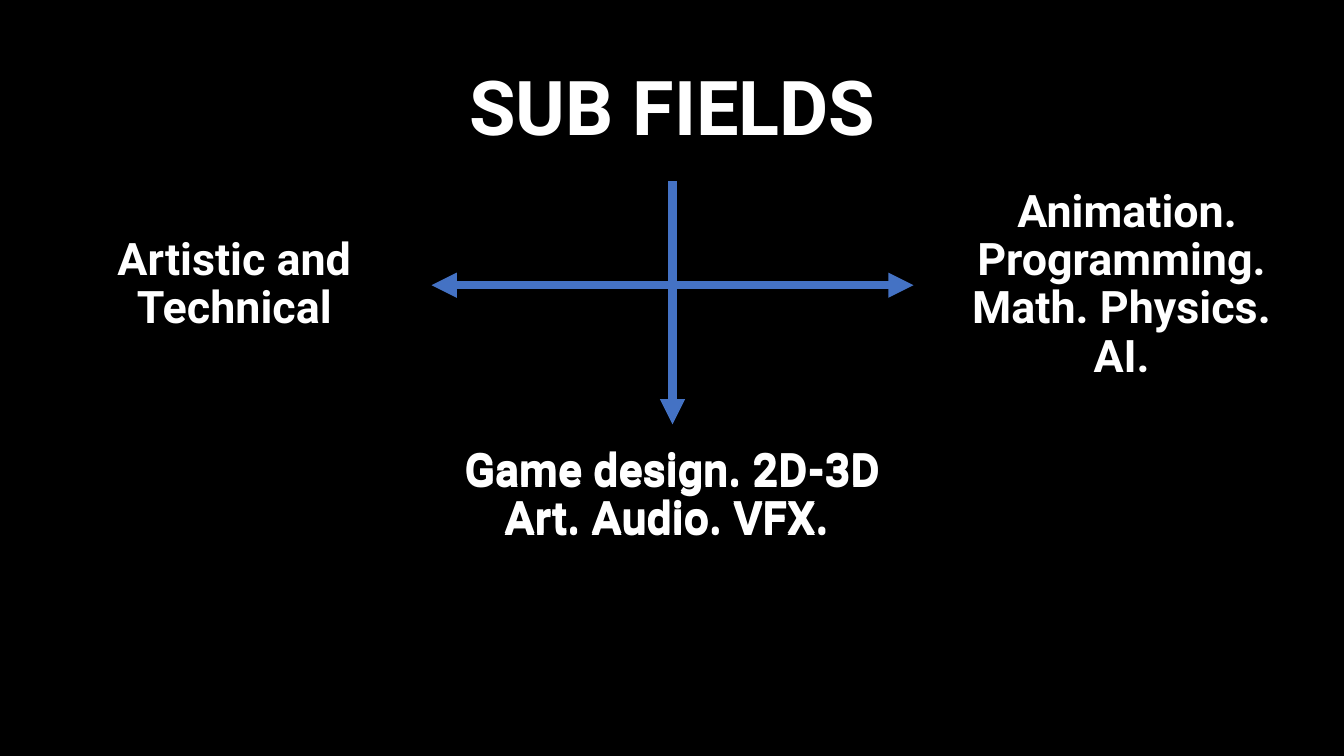
from dataclasses import dataclass
from lxml.etree import SubElement
from pptx import Presentation
from pptx.dml.color import RGBColor
from pptx.enum.shapes import MSO_CONNECTOR
from pptx.enum.text import MSO_ANCHOR, PP_ALIGN
from pptx.oxml.ns import qn
from pptx.util import Inches, Pt


@dataclass(frozen=True)
class Theme:
    back: RGBColor = RGBColor(0, 0, 0)
    ink: RGBColor = RGBColor(255, 255, 255)
    line: RGBColor = RGBColor(0x44, 0x72, 0xC4)
    font: str = "Roboto"
    head: int = 54
    body: int = 32
    width: int = 6


class Board:
    def __init__(self, slide, theme):
        self.slide = slide
        self.theme = theme
        fill = slide.background.fill
        fill.solid()
        fill.fore_color.rgb = theme.back

    def label(self, text, left, top, width, size):
        box = self.slide.shapes.add_textbox(
            Inches(left), Inches(top), Inches(width), Inches(1.4))
        frame = box.text_frame
        frame.word_wrap = True
        frame.vertical_anchor = MSO_ANCHOR.MIDDLE
        frame.text = text
        para = frame.paragraphs[0]
        para.alignment = PP_ALIGN.CENTER
        para.line_spacing = 0.9
        font = para.runs[0].font
        font.name = self.theme.font
        font.size = Pt(size)
        font.bold = True
        font.color.rgb = self.theme.ink
        return box

    def arrow(self, kind, start, end):
        link = self.slide.shapes.add_connector(
            kind, *(Inches(n) for n in (*start, *end)))
        link.line.color.rgb = self.theme.line
        link.line.width = Pt(self.theme.width)
        props = link._element.spPr
        SubElement(props.find(qn("a:ln")), qn("a:tailEnd"), type="triangle")
        SubElement(props, qn("a:effectLst"))
        return link

    def branch(self, start, end):
        (x1, y1), (x2, y2) = start, end
        mid, level = (x1 + x2) / 2, (y1 + y2) / 2
        drop, reach = (y2 - y1) / 2, abs(x2 - x1) / 2
        side = 1 if x2 < x1 else -1
        link = self.arrow(MSO_CONNECTOR.ELBOW,
                          (mid - side * drop, level - reach),
                          (mid + side * drop, level + reach))
        props = link._element.spPr
        props.find(qn("a:prstGeom")).set("prst", "bentConnector2")
        turn = 90 if side > 0 else 270
        props.find(qn("a:xfrm")).set("rot", str(turn * 60000))


def main():
    deck = Presentation()
    deck.slide_width = Inches(13.33)
    deck.slide_height = Inches(7.5)
    theme = Theme()
    board = Board(deck.slides.add_slide(deck.slide_layouts[6]), theme)

    title = board.label("SUB FIELDS", 1.67, 0.4, 10, theme.head)
    root = (6.67, 1.8)
    for side in (-1, 1):
        board.branch(root, (root[0] + side * 2.39, 2.83))
    stem = board.arrow(MSO_CONNECTOR.STRAIGHT, root, (6.67, 4.2))

    design = "Game design. 2D-3D Art. Audio. VFX. "
    labels = (
        ("Artistic and Technical", 0.37, 2.13, 3.91),
        (design, 4.5, 4.23, 4.34),
        (" Animation. Programming. Math. Physics. AI.", 9.28, 2.13, 3.69),
        (design, 4.5, 4.21, 4.34),
    )
    boxes = [board.label(*item, theme.body) for item in labels]
    stem.begin_connect(title, 2)
    stem.end_connect(boxes[-1], 0)
    deck.save("out.pptx")


if __name__ == "__main__":
    main()
